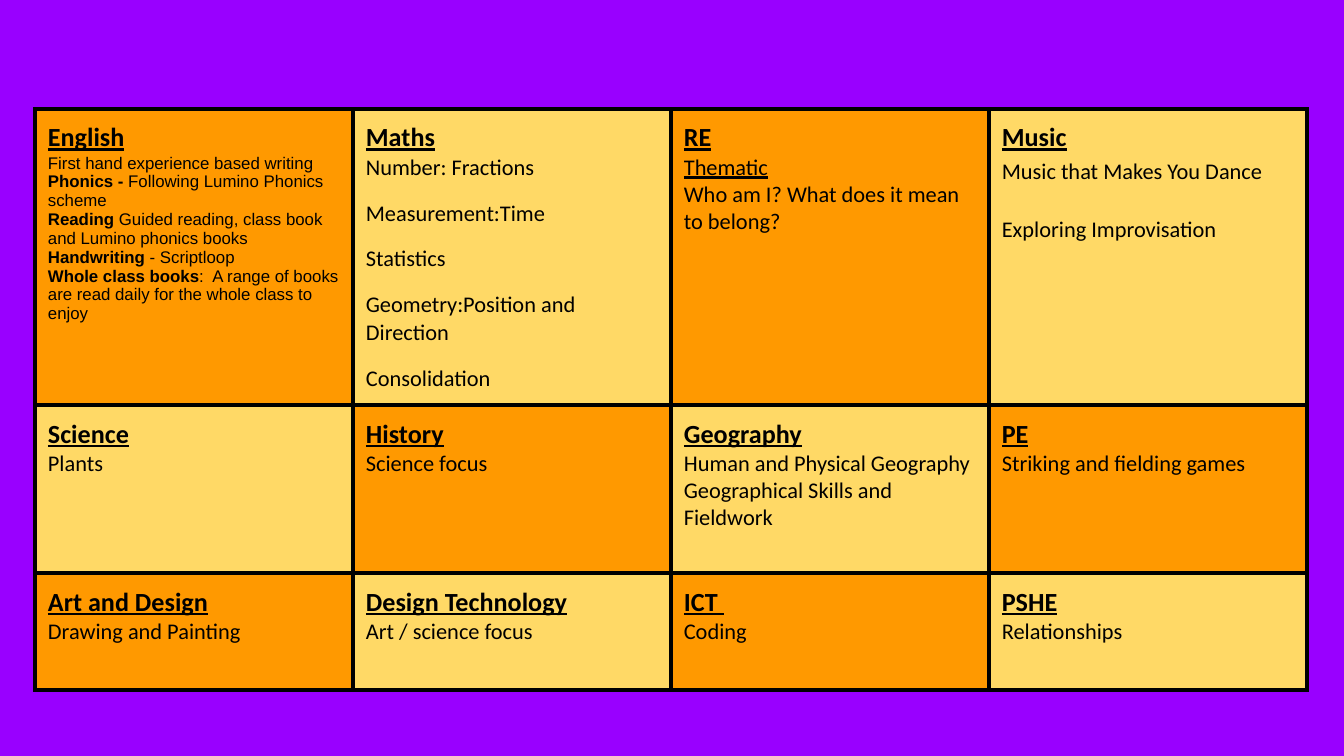
"""Build a one-slide curriculum overview as a table of twelve subjects."""
from lxml.etree import SubElement
from pptx import Presentation
from pptx.dml.color import RGBColor
from pptx.oxml.ns import qn
from pptx.util import Pt

PX = 914400 / 134.4
COLORS = {"back": "9900FF", "orange": "FF9900", "yellow": "FFD966", "ink": "000000"}
LEFT, TOP, COL_W, MARGIN = 35, 109, 318, 13
ROW_HEIGHTS = [296, 168, 117]
BORDER_PT = 2.25

ENGLISH = [
    [("First hand experience based writing", False)],
    [("Phonics -", True), (" Following Lumino Phonics scheme", False)],
    [("Reading ", True), ("Guided reading, class book and Lumino phonics books", False)],
    [("Handwriting", True), (" - Scriptloop", False)],
    [("Whole class books", True),
     (":  A range of books are read daily for the whole class to enjoy", False)],
]
SUBJECTS = [
    [
        {"title": "English", "lines": ENGLISH, "font": "Arial", "size": 9},
        {"title": "Maths", "gap": 10,
         "lines": ["Number: Fractions", "Measurement:Time", "Statistics",
                   "Geometry:Position and Direction", "Consolidation"]},
        {"title": "RE", "underlined": ["Thematic"],
         "lines": ["Thematic", "Who am I? What does it mean to belong?"]},
        {"title": "Music", "gap": 14.6, "spacing": 1.15,
         "lines": ["Music that Makes You Dance", "Exploring Improvisation"]},
    ],
    [
        {"title": "Science", "lines": ["Plants"]},
        {"title": "History", "lines": ["Science focus"]},
        {"title": "Geography",
         "lines": ["Human and Physical Geography", "Geographical Skills and Fieldwork"]},
        {"title": "PE", "lines": ["Striking and fielding games"]},
    ],
    [
        {"title": "Art and Design", "lines": ["Drawing and Painting"]},
        {"title": "Design Technology", "lines": ["Art / science focus"]},
        {"title": "ICT ", "lines": ["Coding"]},
        {"title": "PSHE", "lines": ["Relationships"]},
    ],
]


def px(n):
    return round(n * PX)


def rgb(name):
    return RGBColor.from_string(COLORS[name])


def add_run(p, text, font="Calibri", size=12, bold=False, underline=False):
    r = p.add_run()
    r.text = text
    r.font.name, r.font.size = font, Pt(size)
    r.font.bold, r.font.underline = bold, underline
    r.font.color.rgb = rgb("ink")


def set_borders(cell):
    tc_pr = cell._tc.get_or_add_tcPr()
    for i, side in enumerate(("lnL", "lnR", "lnT", "lnB")):
        ln = SubElement(tc_pr, qn(f"a:{side}"), w=str(Pt(BORDER_PT)))
        fill = SubElement(ln, qn("a:solidFill"))
        SubElement(fill, qn("a:srgbClr"), val=COLORS["ink"])
        tc_pr.insert(i, ln)


def fill_cell(cell, subject, color):
    cell.fill.solid()
    cell.fill.fore_color.rgb = rgb(color)
    set_borders(cell)
    cell.margin_left = cell.margin_right = px(MARGIN)
    cell.margin_top = cell.margin_bottom = px(MARGIN)
    tf = cell.text_frame
    add_run(tf.paragraphs[0], subject["title"], size=14, bold=True, underline=True)
    for i, line in enumerate(subject["lines"]):
        p = tf.add_paragraph()
        p.line_spacing = subject.get("spacing", 1.0)
        p.space_before = Pt(subject.get("gap", 0) if i else 0)
        runs = [(line, False)] if isinstance(line, str) else line
        for text, bold in runs:
            add_run(p, text, subject.get("font", "Calibri"), subject.get("size", 12),
                    bold, text in subject.get("underlined", []))


def main():
    prs = Presentation()
    prs.slide_width, prs.slide_height = px(1344), px(756)
    s = prs.slides.add_slide(prs.slide_layouts[6])
    s.background.fill.solid()
    s.background.fill.fore_color.rgb = rgb("back")
    n_cols = len(SUBJECTS[0])
    table = s.shapes.add_table(len(SUBJECTS), n_cols, px(LEFT), px(TOP),
                               px(COL_W * n_cols), px(sum(ROW_HEIGHTS))).table
    table.first_row = table.horz_banding = False
    for col in table.columns:
        col.width = px(COL_W)
    for i, (row, height) in enumerate(zip(SUBJECTS, ROW_HEIGHTS)):
        table.rows[i].height = px(height)
        for j, subject in enumerate(row):
            fill_cell(table.cell(i, j), subject, ("orange", "yellow")[(i + j) % 2])
    prs.save("out.pptx")


if __name__ == "__main__":
    main()
